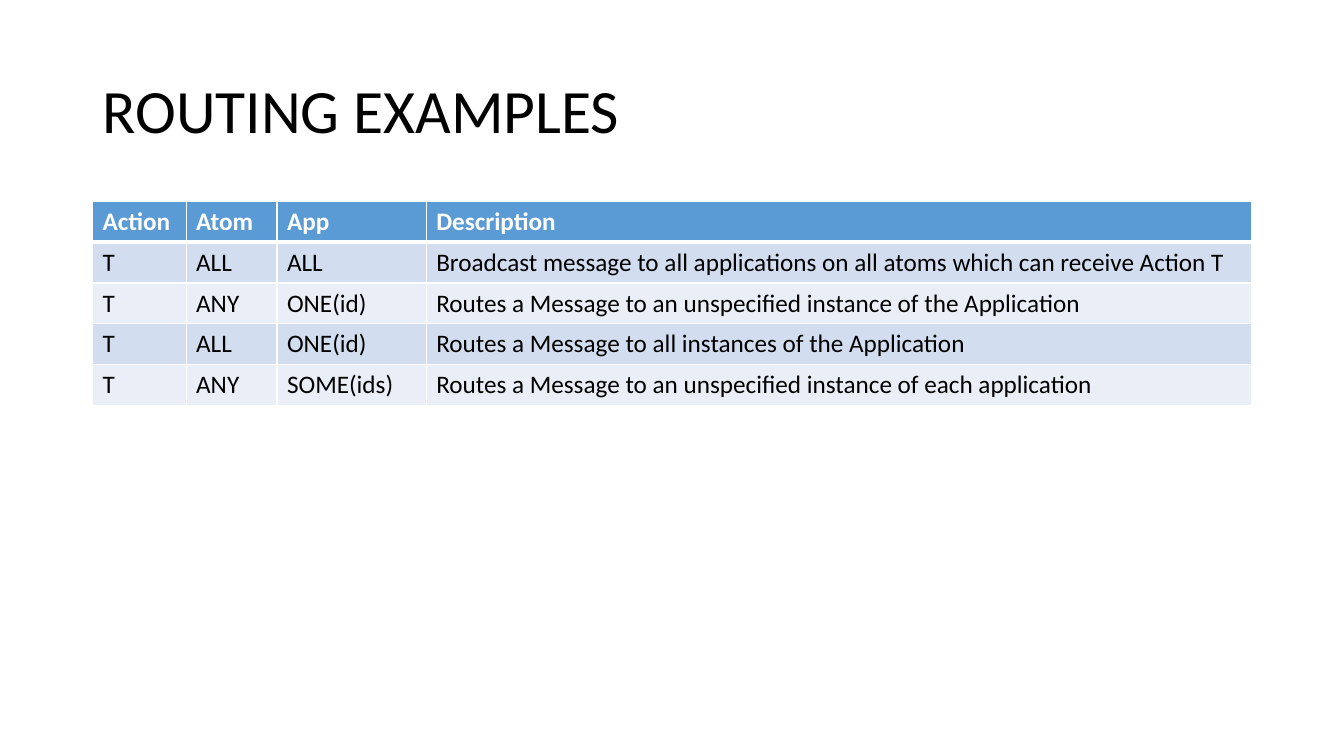
"""Build a slide with a table of message routing examples."""
from lxml import etree
from pptx import Presentation
from pptx.dml.color import RGBColor
from pptx.enum.text import MSO_ANCHOR, PP_ALIGN
from pptx.oxml.ns import qn
from pptx.util import Cm, Pt

LEFT = PP_ALIGN.LEFT
MIDDLE = MSO_ANCHOR.MIDDLE

HEADING = "ROUTING EXAMPLES"
ROUTES = [
    ("Action", "Atom", "App", "Description"),
    ("T", "ALL", "ALL",
     "Broadcast message to all applications on all atoms which can receive Action T"),
    ("T", "ANY", "ONE(id)",
     "Routes a Message to an unspecified instance of the Application"),
    ("T", "ALL", "ONE(id)",
     "Routes a Message to all instances of the Application"),
    ("T", "ANY", "SOME(ids)",
     "Routes a Message to an unspecified instance of each application"),
]

WHITE, BLACK = "FFFFFF", "000000"
HEADER_FILL = "5B9BD5"
BAND_FILLS = ("D2DEEF", "EAEFF7")
HEADING_FONT = {"name": "Calibri", "size": Pt(44), "bold": False}
HEADER_FONT = {"name": "Calibri", "size": Pt(18), "bold": True}
BODY_FONT = {**HEADER_FONT, "bold": False}

MARGIN, CONTENT_WIDTH = 2.33, 29.21
HEADING_TOP, HEADING_HEIGHT = 1.01, 3.68
TABLE_TOP, ROW_HEIGHT = 5.07, 1.03
COLUMN_WIDTHS = (2.36, 2.29, 3.76, 20.8)
THIN, THICK = 1, 3


def rgb(color):
    return RGBColor.from_string(color)


def style_font(font, formats, color):
    for attribute, value in formats.items():
        setattr(font, attribute, value)
    font.color.rgb = rgb(color)


def add_borders(cell, widths):
    properties = cell._tc.get_or_add_tcPr()
    for side, width in widths.items():
        border = etree.SubElement(properties, qn(f"a:ln{side}"), w=str(Pt(width)))
        fill = etree.SubElement(border, qn("a:solidFill"))
        etree.SubElement(fill, qn("a:srgbClr"), val=WHITE)


def add_heading(slide):
    heading = slide.shapes.title
    box = {"left": MARGIN, "top": HEADING_TOP,
           "width": CONTENT_WIDTH, "height": HEADING_HEIGHT}
    for attribute, value in box.items():
        setattr(heading, attribute, Cm(value))
    frame = heading.text_frame
    frame.text = HEADING
    frame.vertical_anchor = MIDDLE
    paragraph = frame.paragraphs[0]
    paragraph.alignment = LEFT
    paragraph.line_spacing = 0.9
    style_font(paragraph.runs[0].font, HEADING_FONT, BLACK)


def add_routes(slide):
    routes = slide.shapes.add_table(
        len(ROUTES), len(COLUMN_WIDTHS), Cm(MARGIN), Cm(TABLE_TOP),
        Cm(CONTENT_WIDTH), Cm(ROW_HEIGHT * len(ROUTES))).table
    for column, width in zip(routes.columns, COLUMN_WIDTHS):
        column.width = Cm(width)
    for index, route in enumerate(ROUTES):
        routes.rows[index].height = Cm(ROW_HEIGHT)
        is_header = index == 0
        fill = HEADER_FILL if is_header else BAND_FILLS[(index - 1) % 2]
        formats, color = (HEADER_FONT, WHITE) if is_header else (BODY_FONT, BLACK)
        widths = {"L": THIN, "R": THIN,
                  "T": THICK if index == 1 else THIN,
                  "B": THICK if is_header else THIN}
        for cell, text in zip(routes.rows[index].cells, route):
            cell.text = text
            style_font(cell.text_frame.paragraphs[0].runs[0].font, formats, color)
            add_borders(cell, widths)
            cell.fill.solid()
            cell.fill.fore_color.rgb = rgb(fill)


def main():
    deck = Presentation()
    deck.slide_width, deck.slide_height = Cm(33.87), Cm(19.05)
    slide = deck.slides.add_slide(deck.slide_layouts[5])
    add_heading(slide)
    add_routes(slide)
    deck.save("out.pptx")


if __name__ == "__main__":
    main()
